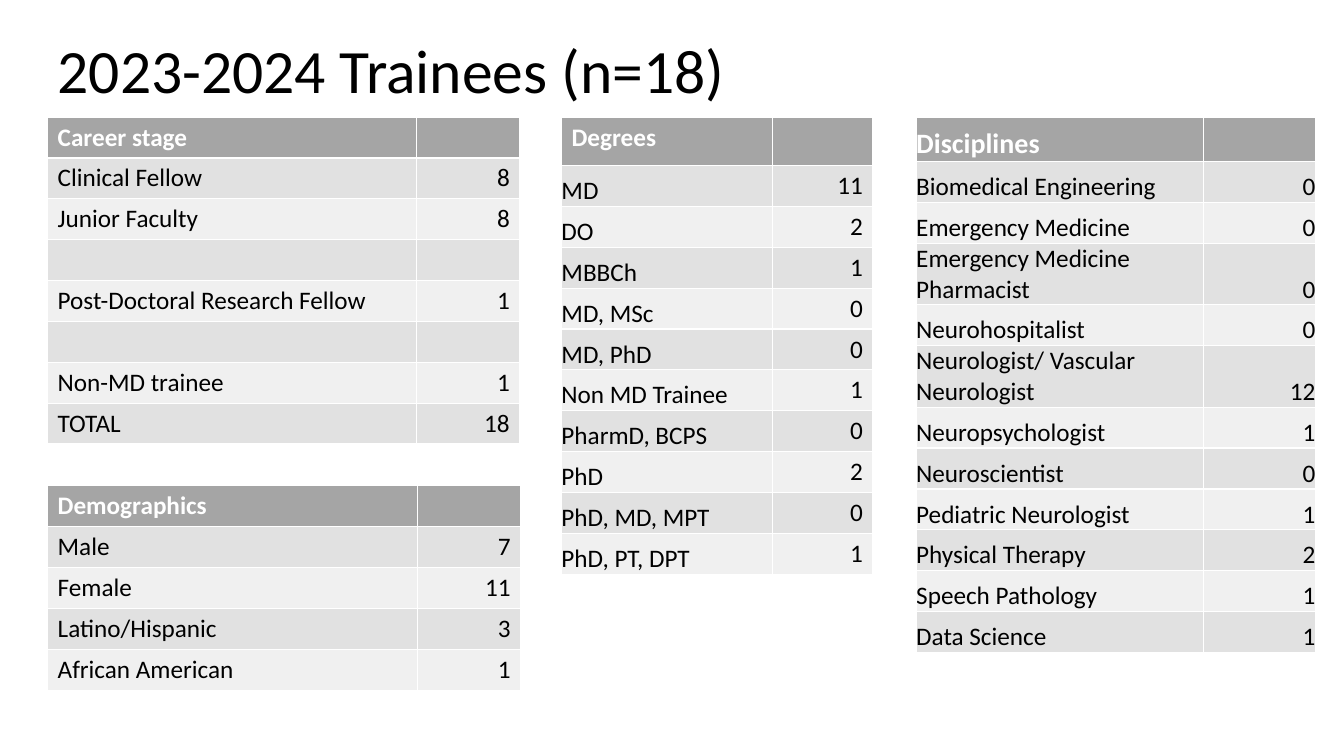
from pptx import Presentation
from pptx.dml.color import RGBColor
from pptx.enum import text
from pptx.util import Cm, Pt

# Content
TITLE = "2023-2024 Trainees (n=18)"
CAREER = [
    ("Career stage", ""),
    ("Clinical Fellow", "8"),
    ("Junior Faculty", "8"),
    ("", ""),
    ("Post-Doctoral Research Fellow", "1"),
    ("", ""),
    ("Non-MD trainee", "1"),
    ("TOTAL", "18"),
]
DEMOGRAPHICS = [
    ("Demographics", ""),
    ("Male", "7"),
    ("Female", "11"),
    ("Latino/Hispanic", "3"),
    ("African American", "1"),
]
DEGREES = [
    ("Degrees", ""),
    ("MD", "11"),
    ("DO", "2"),
    ("MBBCh", "1"),
    ("MD, MSc", "0"),
    ("MD, PhD", "0"),
    ("Non MD Trainee", "1"),
    ("PharmD, BCPS", "0"),
    ("PhD", "2"),
    ("PhD, MD, MPT", "0"),
    ("PhD, PT, DPT", "1"),
]
DISCIPLINES = [
    ("Disciplines", ""),
    ("Biomedical Engineering", "0"),
    ("Emergency Medicine", "0"),
    ("Emergency Medicine Pharmacist", "0"),
    ("Neurohospitalist", "0"),
    ("Neurologist/ Vascular Neurologist", "12"),
    ("Neuropsychologist", "1"),
    ("Neuroscientist", "0"),
    ("Pediatric Neurologist", "1"),
    ("Physical Therapy", "2"),
    ("Speech Pathology", "1"),
    ("Data Science", "1"),
]

# Style and layout, lengths in centimetres
FONT = "Calibri"
BLACK = RGBColor(0x00, 0x00, 0x00)
WHITE = RGBColor(0xFF, 0xFF, 0xFF)
HEADER_GREY = RGBColor(0xA5, 0xA5, 0xA5)
BANDS = (RGBColor(0xF0, 0xF0, 0xF0), RGBColor(0xE1, 0xE1, 0xE1))
LEFT, TOP, ROW = 1.2, 2.95, 1.03

# rows, left, top, column widths, header height, header size, flush cells
TABLES = [
    (CAREER, LEFT, TOP, (9.3, 2.6), ROW, 18, ()),
    (DEMOGRAPHICS, LEFT, 12.24, (9.32, 2.6), ROW, 18, ()),
    (DEGREES, 14.15, TOP, (5.31, 2.54), 1.22, 18, ("label",)),
    (DISCIPLINES, 23.09, TOP, (7.24, 2.82), ROW, 20, ("header", "label", "value")),
]


def format_cell(cell, content, fill, colour, size, bold, flush):
    cell.text = content
    cell.fill.solid()
    cell.fill.fore_color.rgb = fill
    if flush:
        cell.margin_left = cell.margin_right = 0
        cell.margin_top = cell.margin_bottom = 0
        cell.vertical_anchor = text.MSO_ANCHOR.BOTTOM
    font = cell.text_frame.paragraphs[0].font
    font.name, font.size, font.bold = FONT, Pt(size), bold
    font.color.rgb = colour


def add_count_table(slide, rows, left, top, widths, header_height, header_size, flush):
    height = header_height + ROW * (len(rows) - 1)
    frame = slide.shapes.add_table(
        len(rows), 2, Cm(left), Cm(top), Cm(sum(widths)), Cm(height))
    table = frame.table
    for column, width in zip(table.columns, widths):
        column.width = Cm(width)
    for index, row in enumerate(rows):
        header = index == 0
        table.rows[index].height = Cm(header_height if header else ROW)
        fill = HEADER_GREY if header else BANDS[index % 2]
        for part, content in enumerate(row):
            role = "header" if header else ("label", "value")[part]
            cell = table.cell(index, part)
            format_cell(cell, content, fill, WHITE if header else BLACK,
                        header_size if header else 18, header,
                        role in flush and content)
            if role == "value":
                cell.text_frame.paragraphs[0].alignment = text.PP_ALIGN.RIGHT


def main():
    presentation = Presentation()
    presentation.slide_width, presentation.slide_height = Cm(33.87), Cm(19.05)
    slide = presentation.slides.add_slide(presentation.slide_layouts[5])

    # Title
    title = slide.shapes.title
    title.left, title.top, title.width, title.height = (
        Cm(LEFT), Cm(0.64), Cm(29.21), Cm(2.41))
    title.text_frame.text = TITLE
    title.text_frame.vertical_anchor = text.MSO_ANCHOR.MIDDLE
    paragraph = title.text_frame.paragraphs[0]
    paragraph.alignment = text.PP_ALIGN.LEFT
    paragraph.line_spacing = 0.9
    paragraph.font.name, paragraph.font.size = FONT, Pt(44)
    paragraph.font.color.rgb = BLACK

    # Tables
    for settings in TABLES:
        add_count_table(slide, *settings)

    presentation.save("out.pptx")


if __name__ == "__main__":
    main()
